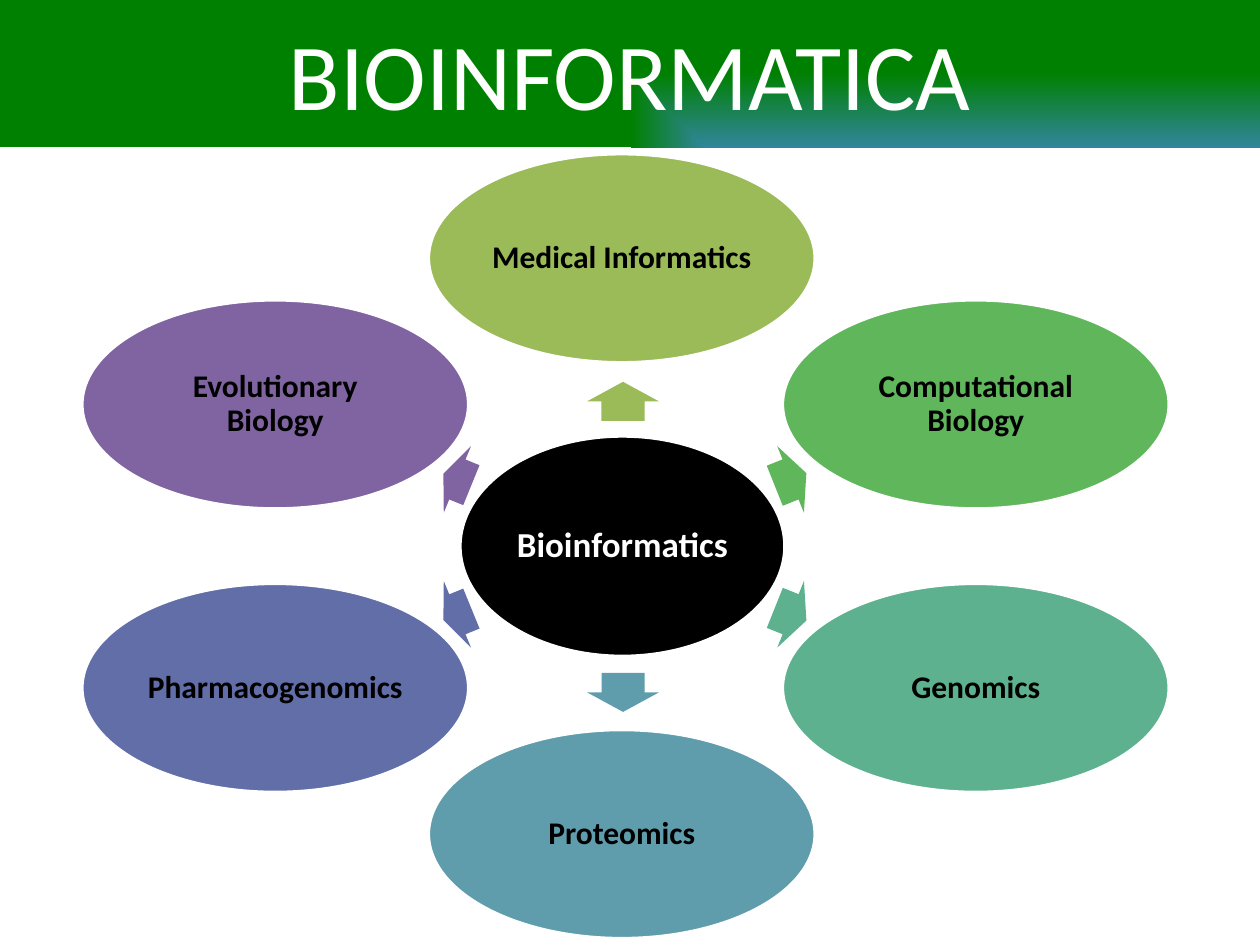
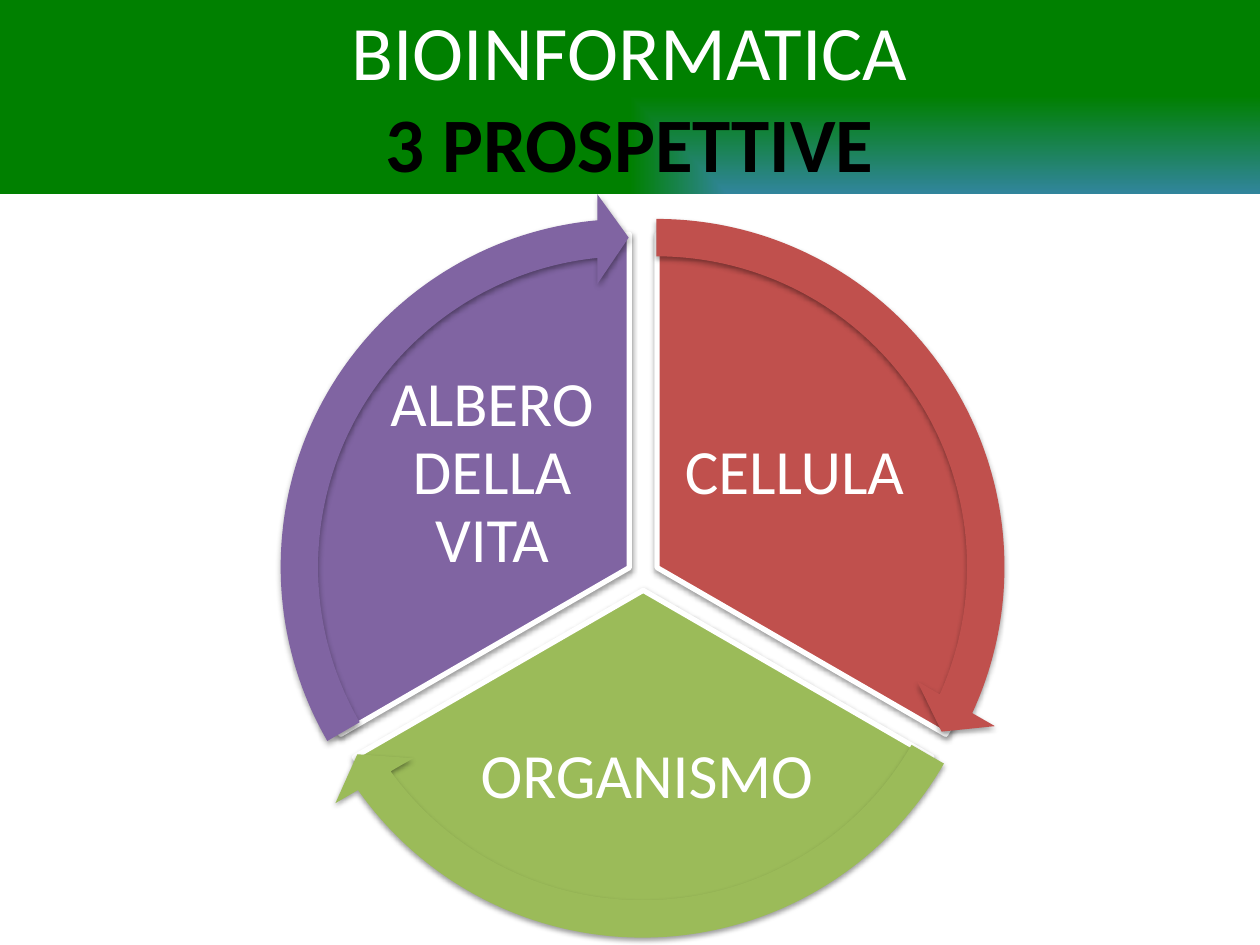
from pptx import Presentation
from pptx.dml.color import RGBColor
from pptx.enum.shapes import MSO_SHAPE
from pptx.enum.text import MSO_ANCHOR, PP_ALIGN
from pptx.oxml import parse_xml
from pptx.oxml.ns import nsdecls, qn
from pptx.util import Pt

PX = 9144  # EMU per px, 100 px to the inch
FONT = "Calibri"

WHITE = RGBColor(0xFF, 0xFF, 0xFF)
BLACK = RGBColor(0x00, 0x00, 0x00)
BAND_GREEN = RGBColor(0x00, 0x80, 0x00)
BAND_TEAL = RGBColor(0x31, 0x85, 0x9C)
OLIVE = RGBColor(0x9B, 0xBB, 0x59)
GREEN = RGBColor(0x5F, 0xB6, 0x5B)
SEA = RGBColor(0x5D, 0xB1, 0x8E)
STEEL = RGBColor(0x5F, 0x9D, 0xAC)
INDIGO = RGBColor(0x62, 0x6E, 0xA7)
PURPLE = RGBColor(0x80, 0x64, 0xA2)
RED = RGBColor(0xC0, 0x50, 0x4D)

RECT = MSO_SHAPE.RECTANGLE
ELLIPSE = MSO_SHAPE.OVAL
ARROW = MSO_SHAPE.RIGHT_ARROW
PIE = MSO_SHAPE.PIE
CIRCULAR_ARROW = MSO_SHAPE.CIRCULAR_ARROW
MIDDLE = MSO_ANCHOR.MIDDLE
CENTER = PP_ALIGN.CENTER

# Radial diagram: label, colour, ellipse corner, arrow box, arrow rotation
NODE_SIZE = (307, 166)
NODES = [
    ("Medical Informatics", OLIVE, (340, 122), (479, 290, 31, 57), 270),
    ("Computational Biology", GREEN, (621, 238), (614, 352, 27, 57), 338.2),
    ("Genomics", SEA, (621, 463), (614, 459, 27, 57), 21.8),
    ("Proteomics", STEEL, (340, 579), (479, 521, 31, 57), 90),
    ("Pharmacogenomics", INDIGO, (65, 463), (351, 459, 24, 57), 157.8),
    ("Evolutionary Biology", PURPLE, (65, 238), (351, 352, 24, 57), 202.2),
]

# Cycle: label, colour, pie corner, start angle in degrees, label box
PIE_SIZE = 529
RING_SIZE = 594
RING_OFFSET = 33
SECTOR_SWEEP = 120
ADJ_PER_DEGREE = 0.6
HEAD_SWEEP = 3.28  # in adjustment units
SECTORS = [
    ("CELLULA", RED, (257, 186), 270, (536, 298, 189, 157)),
    ("ORGANISMO", OLIVE, (246, 204), 30, (372, 548, 283, 139)),
    ("ALBERO DELLA VITA", PURPLE, (235, 186), 150, (296, 298, 189, 157)),
]


def emu(box):
    return [length * PX for length in box]


def add_shape(slide, kind, box, color=None, line=None, adjustments=()):
    sp = slide.shapes.add_shape(kind, *emu(box))
    sp.shadow.inherit = False
    if color is not None:
        sp.fill.solid()
        sp.fill.fore_color.rgb = color
    if line:
        sp.line.color.rgb = WHITE
        sp.line.width = Pt(line)
    else:
        sp.line.fill.background()
    for i, value in enumerate(adjustments):
        sp.adjustments[i] = value
    return sp


def add_drop_shadow(sp):
    effects = sp._element.spPr.find(qn("a:effectLst"))
    effects.append(parse_xml(
        f'<a:outerShdw {nsdecls("a")} blurRad="40000" dist="20000" '
        'dir="5400000" rotWithShape="0"><a:srgbClr val="000000">'
        '<a:alpha val="38000"/></a:srgbClr></a:outerShdw>'))


def style_paragraph(p, text, size, color, bold=False):
    p.text = text
    p.alignment = CENTER
    p.font.name = FONT
    p.font.size = Pt(size)
    p.font.bold = bold
    p.font.color.rgb = color


def set_label(sp, text, size, color, bold=False, inset=3):
    tf = sp.text_frame
    tf.word_wrap = True
    tf.vertical_anchor = MIDDLE
    tf.margin_left = tf.margin_right = inset * PX
    tf.margin_top = tf.margin_bottom = inset * PX
    p = tf.paragraphs[0]
    style_paragraph(p, text, size, color, bold)
    p.line_spacing = 0.9


def add_title_band(slide, height, size, title, subtitle=None):
    sp = add_shape(slide, RECT, (0, -2, 1000, height))
    # Gradient spreading from the bottom right corner
    sp.fill.gradient()
    for stop, color in zip(sp.fill.gradient_stops, (BAND_TEAL, BAND_GREEN)):
        stop.color.rgb = color
    grad = sp._element.spPr.find(qn("a:gradFill"))
    grad.remove(grad.find(qn("a:lin")))
    grad.append(parse_xml(
        f'<a:path {nsdecls("a")} path="rect">'
        '<a:fillToRect l="100000" t="100000"/></a:path>'))
    grad.append(parse_xml(
        f'<a:tileRect {nsdecls("a")} r="-100000" b="-100000"/>'))
    tf = sp.text_frame
    tf.word_wrap = True
    tf.vertical_anchor = MIDDLE
    style_paragraph(tf.paragraphs[0], title, size, WHITE)
    if subtitle:
        style_paragraph(tf.add_paragraph(), subtitle, size, BLACK, bold=True)


def add_radial_diagram(slide):
    hub = add_shape(slide, ELLIPSE, (365, 346, 258, 175), BLACK, line=2)
    set_label(hub, "Bioinformatics", 20, WHITE, bold=True)
    for label, color, corner, arrow_box, rotation in NODES:
        arrow = add_shape(slide, ARROW, arrow_box, color,
                          adjustments=(0.6, 0.5))
        arrow.rotation = rotation
        node = add_shape(slide, ELLIPSE, corner + NODE_SIZE, color, line=2)
        set_label(node, label, 18, BLACK, bold=True)


def add_cycle(slide):
    # Sectors with their labels
    for label, color, corner, start, label_box in SECTORS:
        end = (start + SECTOR_SWEEP) % 360
        pie = add_shape(
            slide, PIE, corner + (PIE_SIZE, PIE_SIZE), color, line=3,
            adjustments=(start * ADJ_PER_DEGREE, end * ADJ_PER_DEGREE))
        add_drop_shadow(pie)
        tb = slide.shapes.add_textbox(*emu(label_box))
        set_label(tb, label, 36, WHITE, inset=5)
    # Arrows along the rim
    for _, color, (x, y), start, _ in SECTORS:
        end = (start + SECTOR_SWEEP) % 360
        ring = add_shape(
            slide, CIRCULAR_ARROW,
            (x - RING_OFFSET, y - RING_OFFSET, RING_SIZE, RING_SIZE), color,
            adjustments=(0.05, HEAD_SWEEP, end * ADJ_PER_DEGREE - HEAD_SWEEP,
                         start * ADJ_PER_DEGREE, 0.06))
        add_drop_shadow(ring)


def main():
    prs = Presentation()
    prs.slide_width, prs.slide_height = emu((1000, 750))
    blank = prs.slide_layouts[6]

    # Slide 1: fields around bioinformatics
    slide = prs.slides.add_slide(blank)
    add_title_band(slide, 119, 54, "BIOINFORMATICA")
    add_radial_diagram(slide)

    # Slide 2: three perspectives
    slide = prs.slides.add_slide(blank)
    add_title_band(slide, 156, 44, "BIOINFORMATICA", "3 PROSPETTIVE")
    add_cycle(slide)

    prs.save("out.pptx")


if __name__ == "__main__":
    main()
